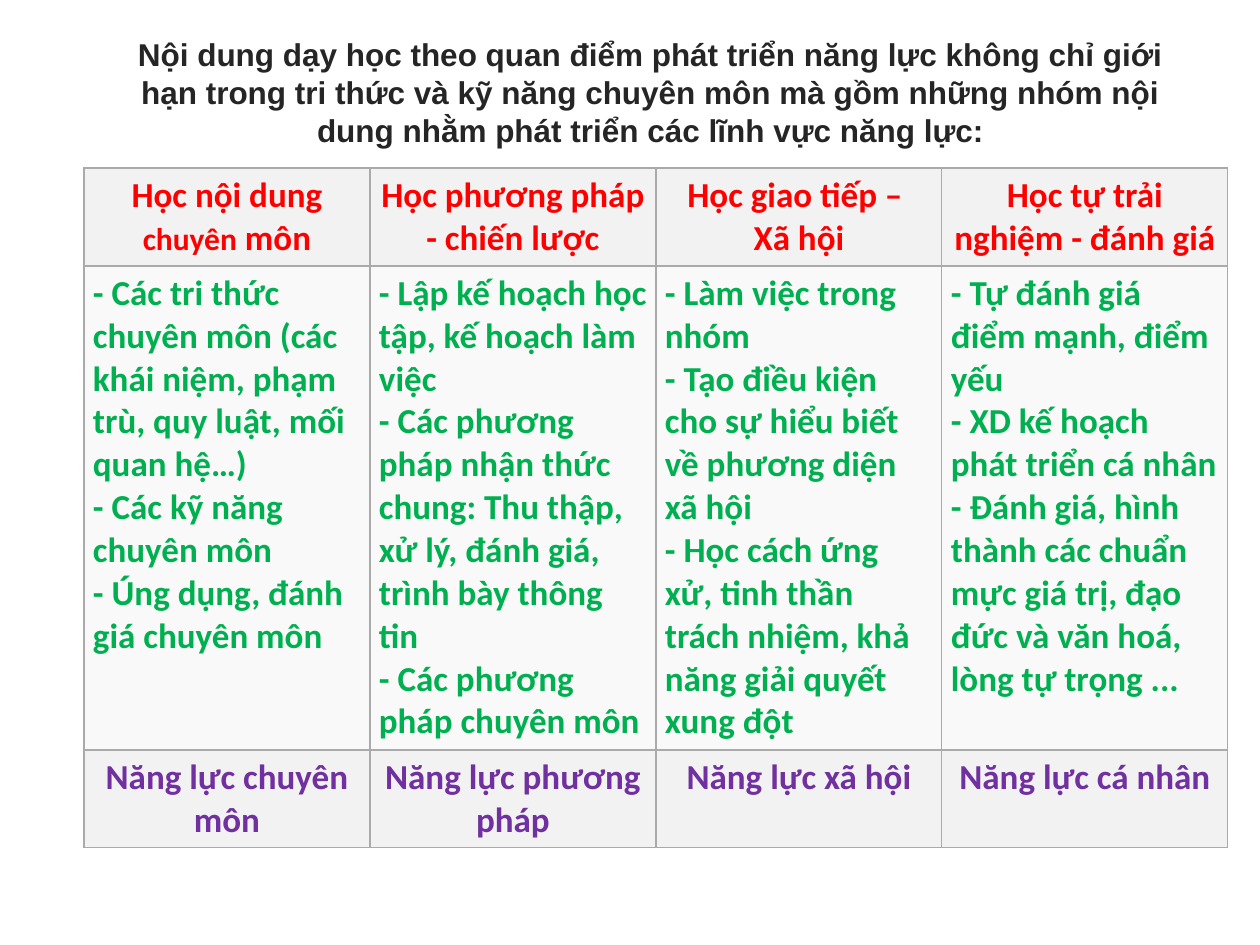
import pptx
import pptx.util
import pptx.dml.color
import pptx.enum.shapes
import pptx.enum.text
import pptx.oxml
import pptx.oxml.ns

# Content: each cell is a list of paragraphs, each paragraph a list of (text, size role)
HEADING = ("Nội dung dạy học theo quan điểm phát triển năng lực không chỉ giới hạn "
           "trong tri thức và kỹ năng chuyên môn mà gồm những nhóm nội dung "
           "nhằm phát triển các lĩnh vực năng lực:")
LEARNING_AREAS = [
    [[("Học nội dung ", "table"), ("chuyên", "small"), (" môn", "table")]],
    [[("Học phương pháp - chiến lược", "table")]],
    [[("Học giao tiếp – ", "table")], [("Xã hội", "table")]],
    [[("Học tự trải nghiệm - đánh giá", "table")]],
]
TOPICS = [
    ["- Các tri thức chuyên môn (các khái niệm, phạm trù, quy luật, mối quan hệ…)",
     "- Các kỹ năng chuyên môn",
     "- Úng dụng, đánh giá chuyên môn"],
    ["- Lập kế hoạch học tập, kế hoạch làm việc",
     "- Các phương pháp nhận thức chung: Thu thập, xử lý, đánh giá, trình bày thông tin",
     "- Các phương pháp chuyên môn"],
    ["- Làm việc trong nhóm",
     "- Tạo điều kiện cho sự hiểu biết về phương diện xã hội",
     "- Học cách ứng xử, tinh thần trách nhiệm, khả năng giải quyết xung đột"],
    ["- Tự đánh giá điểm mạnh, điểm yếu",
     "- XD kế hoạch phát triển cá nhân",
     "- Đánh giá, hình thành các chuẩn mực giá trị, đạo đức và văn hoá, lòng tự trọng ..."],
]
COMPETENCES = ["Năng lực chuyên môn", "Năng lực phương pháp",
               "Năng lực xã hội", "Năng lực cá nhân"]

THEME = {
    "heading_font": "Arial", "table_font": "Calibri",
    "size": {"heading": 18, "table": 20, "small": 18},
    "heading": "252525", "paper": "FFFFFF", "border": "AAAAAA",
    "areas": "FF0000", "topics": "00B050", "competences": "7030A0",
    "band": "F2F2F2", "body": "F9F9F9",
}
CENTER = pptx.enum.text.PP_ALIGN.CENTER
LEFT = pptx.enum.text.PP_ALIGN.LEFT


def plain(paragraphs):
    return [[(text, "table")] for text in paragraphs]


# Rows: height in px, cells, text colour, fill, alignment
ROWS = [
    (98, LEARNING_AREAS, "areas", "band", CENTER),
    (484, [plain(topics) for topics in TOPICS], "topics", "body", LEFT),
    (98, [plain([name]) for name in COMPETENCES], "competences", "band", CENTER),
]
TABLE_LEFT, TABLE_TOP, COLUMN_WIDTH = 84, 168, 286
HEADING_BOX = (73, 31, 1120, 121)


def px(length):
    return pptx.util.Emu(round(length * 914400 / 126))


def color(role):
    return pptx.dml.color.RGBColor.from_string(THEME[role])


def style(font, face, role):
    font.name = face
    font.bold = True
    font.color.rgb = color(role)


def add_borders(cell):
    properties = cell._tc.get_or_add_tcPr()
    for index, side in enumerate(("lnL", "lnR", "lnT", "lnB")):
        properties.insert(index, pptx.oxml.parse_xml(
            f'<a:{side} {pptx.oxml.ns.nsdecls("a")} w="9525"><a:solidFill>'
            f'<a:srgbClr val="{THEME["border"]}"/></a:solidFill></a:{side}>'))


def fill_cell(cell, paragraphs, text_role, fill_role, alignment):
    cell.margin_left = cell.margin_right = px(9)
    cell.margin_top = cell.margin_bottom = px(6)
    cell.fill.solid()
    cell.fill.fore_color.rgb = color(fill_role)
    add_borders(cell)
    frame = cell.text_frame
    for index, runs in enumerate(paragraphs):
        paragraph = frame.add_paragraph() if index else frame.paragraphs[0]
        paragraph.alignment = alignment
        style(paragraph.font, THEME["table_font"], text_role)
        for text, size_role in runs:
            run = paragraph.add_run()
            run.text = text
            run.font.size = pptx.util.Pt(THEME["size"][size_role])


def add_competence_table(slide):
    columns = len(COMPETENCES)
    table = slide.shapes.add_table(
        len(ROWS), columns, px(TABLE_LEFT), px(TABLE_TOP),
        px(COLUMN_WIDTH * columns), px(sum(row[0] for row in ROWS))).table
    for column in table.columns:
        column.width = px(COLUMN_WIDTH)
    for r, (height, cells, *look) in enumerate(ROWS):
        table.rows[r].height = px(height)
        for c, paragraphs in enumerate(cells):
            fill_cell(table.cell(r, c), paragraphs, *look)


def add_heading(slide):
    heading = slide.shapes.add_shape(
        pptx.enum.shapes.MSO_SHAPE.RECTANGLE, *map(px, HEADING_BOX))
    heading.shadow.inherit = False
    heading.fill.solid()
    heading.fill.fore_color.rgb = color("paper")
    heading.line.fill.background()
    frame = heading.text_frame
    frame.word_wrap = True
    frame.vertical_anchor = pptx.enum.text.MSO_ANCHOR.MIDDLE
    frame.margin_left, frame.margin_top = px(35), px(4)
    frame.margin_right, frame.margin_bottom = 0, px(3)
    paragraph = frame.paragraphs[0]
    paragraph.text = HEADING
    paragraph.alignment = CENTER
    style(paragraph.font, THEME["heading_font"], "heading")
    paragraph.font.size = pptx.util.Pt(THEME["size"]["heading"])


def main():
    deck = pptx.Presentation()
    deck.slide_width, deck.slide_height = px(1260), px(945)
    slide = deck.slides.add_slide(deck.slide_layouts[6])
    add_competence_table(slide)
    add_heading(slide)
    deck.save("out.pptx")


if __name__ == "__main__":
    main()
